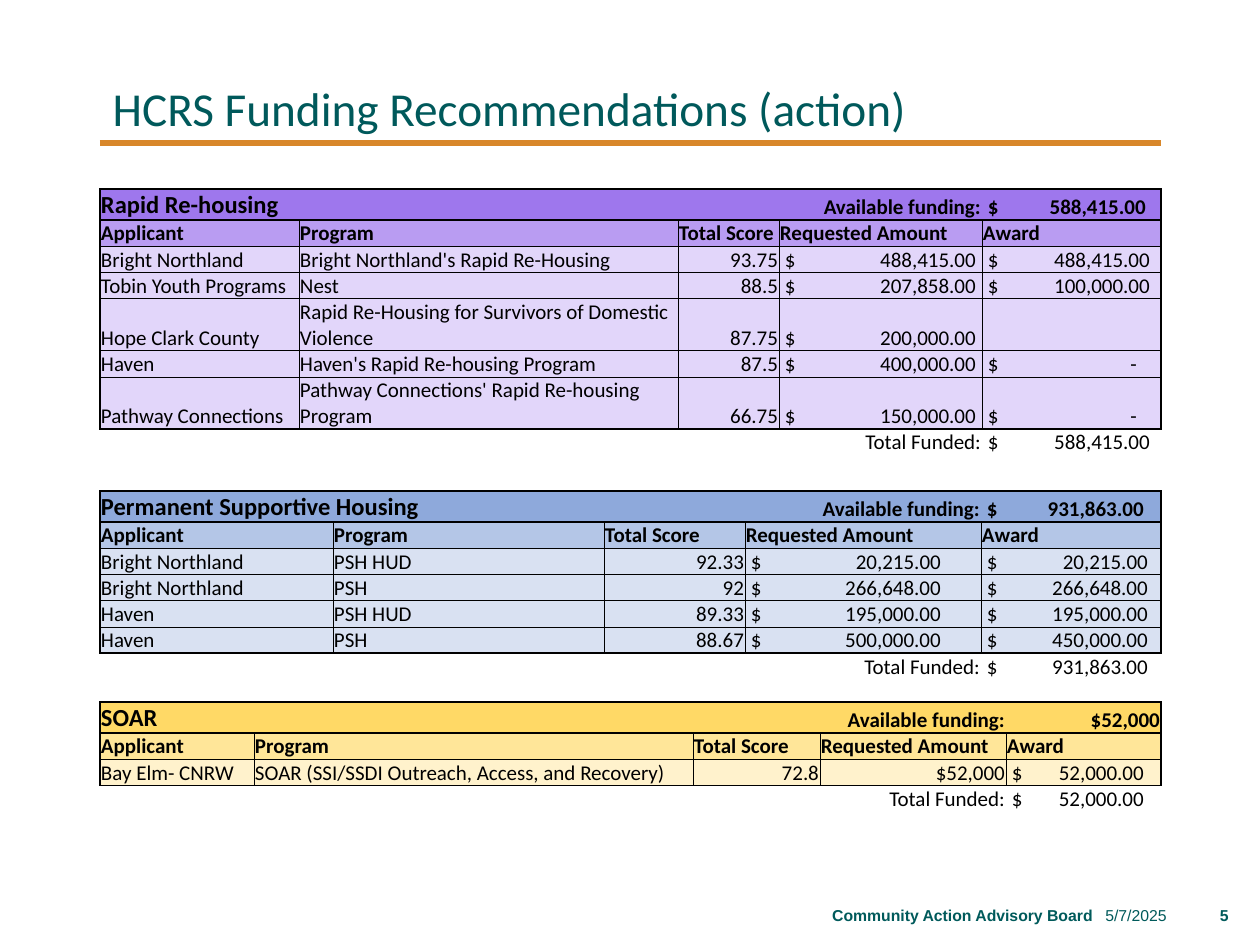
from dataclasses import dataclass
from lxml.etree import SubElement as sub
from pptx import Presentation
from pptx.dml.color import RGBColor as Rgb
from pptx.enum.shapes import MSO_CONNECTOR as Conn
from pptx.enum.text import MSO_ANCHOR as Anchor, MSO_AUTO_SIZE as Fit, PP_ALIGN as Align
from pptx.oxml.ns import qn
from pptx.util import Pt


@dataclass(frozen=True)
class Theme:
    head: str = "00595B"
    foot: str = "005A5B"
    rule: str = "D8872A"
    ink: str = "000000"
    font: str = "Calibri"
    small: str = "Arial"
    title: int = 27
    name: int = 14
    body: int = 12
    note: int = 9
    thin: float = 0.5
    thick: float = 1


@dataclass(frozen=True)
class Fund:
    name: str
    top: int
    cols: tuple
    fills: tuple  # name row, label row, body rows
    stops: dict  # column: right tab for its amounts
    budget: str
    rows: tuple
    total: str
    tall: tuple = ()
    span: int = 1


LEFT, WIDTH = 100, 1061
HIGH, LINE, TWO = 31, 26, 52
PAD = 6
PLAIN = "{2D5ABB26-0587-4C30-8999-92F81FD0307C}"
LABELS = ("Applicant", "Program", "Total Score", "Requested Amount", "Award")


def px(n):
    return round(n * 914400 / 126)


def cash(text):
    return "$\t" + text


class Deck:
    def __init__(self, theme):
        self.theme = theme
        self.prs = Presentation()
        self.prs.slide_width, self.prs.slide_height = px(1260), px(945)
        self.slide = self.prs.slides.add_slide(self.prs.slide_layouts[5])

    def run(self, para, text, size, color, font, bold=False):
        run = para.add_run()
        run.text = text
        style = run.font
        style.size, style.name, style.bold = Pt(size), font, bold
        style.color.rgb = Rgb.from_string(color)

    def title(self, text, x, y, w, h):
        box, t = self.slide.shapes.title, self.theme
        box.left, box.top, box.width, box.height = map(px, (x, y, w, h))
        frame = box.text_frame
        frame.auto_size, frame.vertical_anchor = Fit.NONE, Anchor.BOTTOM
        para = frame.paragraphs[0]
        para.alignment, para.line_spacing = Align.LEFT, 0.9
        self.run(para, text, t.title, t.head, t.font)

    def rule(self, x, y, w):
        line = self.slide.shapes.add_connector(
            Conn.STRAIGHT, px(x), px(y), px(x + w), px(y))
        line.line.color.rgb = Rgb.from_string(self.theme.rule)
        line.line.width = Pt(3)
        sub(line._element.spPr, qn("a:effectLst"))

    def note(self, text, x, w, bold=True):
        t = self.theme
        box = self.slide.shapes.add_textbox(px(x), px(890), px(w), px(50))
        frame = box.text_frame
        frame.word_wrap, frame.vertical_anchor = True, Anchor.MIDDLE
        para = frame.paragraphs[0]
        para.alignment = Align.RIGHT
        self.run(para, text, t.note, t.foot, t.small, bold)

    def edge(self, cell, side, width):
        line = sub(cell._tc.get_or_add_tcPr(), qn("a:ln" + side), w=str(Pt(width)))
        if width:
            fill = sub(line, qn("a:solidFill"))
            sub(fill, qn("a:srgbClr"), val=self.theme.ink)
        else:
            sub(line, qn("a:noFill"))

    def edges(self, cell, r, c, last):
        """Thick round the block and name row, thin inside, none by the total."""
        t = self.theme
        inner = t.thin if 0 < r < last else 0
        outer = t.thick if r < last else 0
        self.edge(cell, "L", inner if c else outer)
        self.edge(cell, "R", inner if c < 4 else outer)
        self.edge(cell, "T", t.thick if r in (0, 1, last) else t.thin)
        self.edge(cell, "B", 0 if r == last else
                  t.thick if r in (0, last - 1) else t.thin)

    def label(self, cell, text, size, bold, right, stop):
        t = self.theme
        amount = "\t" in text
        cell.margin_left = px(PAD if amount else 1)
        cell.margin_right = cell.margin_top = px(1)
        cell.margin_bottom = 0
        cell.vertical_anchor = Anchor.BOTTOM
        para = cell.text_frame.paragraphs[0]
        para.alignment = Align.RIGHT if right and not amount else Align.LEFT
        if amount:
            tabs = sub(para._p.get_or_add_pPr(), qn("a:tabLst"))
            sub(tabs, qn("a:tab"), pos=str(px(stop - PAD)), algn="r")
        if text:
            self.run(para, text, size, t.ink, t.font, bold)
        else:
            sub(para._p, qn("a:endParaRPr"), sz=str(size * 100))

    def table(self, fund):
        t = self.theme
        grid = [(fund.name, "", "", "Available funding:", fund.budget), LABELS,
                *fund.rows, ("", "", "", "Total Funded:", fund.total)]
        last = len(grid) - 1
        highs = [HIGH] + [TWO if r in fund.tall else LINE for r in range(1, last + 1)]
        frame = self.slide.shapes.add_table(
            len(grid), 5, px(LEFT), px(fund.top), px(WIDTH), px(sum(highs)))
        table = frame.table
        table.first_row = table.horz_banding = False
        table._tbl.tblPr.find(qn("a:tableStyleId")).text = PLAIN
        for col, w in zip(table.columns, fund.cols):
            col.width = px(w)
        for row, h in zip(table.rows, highs):
            row.height = px(h)
        for r, texts in enumerate(grid):
            for c, text in enumerate(texts):
                cell = table.cell(r, c)
                size = t.name if (r, c) == (0, 0) else t.body
                stop = fund.stops.get(c, 0) - (4 if r == 0 else 13 if text[-1:] == "-" else 0)
                self.label(cell, text, size, r < 2, r != 1 and c > 1, stop)
                self.edges(cell, r, c, last)
                if r < last:
                    cell.fill.solid()
                    cell.fill.fore_color.rgb = Rgb.from_string(fund.fills[min(r, 2)])
                else:
                    cell.fill.background()
        if fund.span > 1:
            table.cell(0, 0).merge(table.cell(0, fund.span - 1))


FUNDS = (
    Fund("Rapid Re-housing", 189, (199, 379, 101, 203, 179),
         ("9E77ED", "B99CF2", "E2D6FA"), {3: 197, 4: 168}, cash("588,415.00"), (
             ("Bright Northland", "Bright Northland's Rapid Re-Housing", "93.75",
              cash("488,415.00"), cash("488,415.00")),
             ("Tobin Youth Programs", "Nest", "88.5", cash("207,858.00"), cash("100,000.00")),
             ("Hope Clark County", "Rapid Re-Housing for Survivors of Domestic Violence",
              "87.75", cash("200,000.00"), ""),
             ("Haven", "Haven's Rapid Re-housing Program", "87.5",
              cash("400,000.00"), cash("-")),
             ("Pathway Connections", "Pathway Connections' Rapid Re-housing Program",
              "66.75", cash("150,000.00"), cash("-"))),
         cash("588,415.00"), tall=(4, 6)),
    Fund("Permanent Supportive Housing", 491, (233, 271, 141, 236, 180),
         ("8EA9DB", "B4C6E7", "D9E1F2"), {3: 196, 4: 167}, cash("931,863.00"), (
             ("Bright Northland", "PSH HUD", "92.33", cash("20,215.00"), cash("20,215.00")),
             ("Bright Northland", "PSH", "92", cash("266,648.00"), cash("266,648.00")),
             ("Haven", "PSH HUD", "89.33", cash("195,000.00"), cash("195,000.00")),
             ("Haven", "PSH", "88.67", cash("500,000.00"), cash("450,000.00"))),
         cash("931,863.00"), span=2),
    Fund("SOAR", 702, (154, 439, 127, 186, 155),
         ("FFD966", "FFE699", "FFF2CC"), {4: 138}, "$52,000", (
             ("Bay Elm- CNRW", "SOAR (SSI/SSDI Outreach, Access, and Recovery)", "72.8",
              "$52,000", cash("52,000.00")),),
         cash("52,000.00")),
)


def main():
    deck = Deck(Theme())
    deck.rule(LEFT, 143, WIDTH)
    deck.title("HCRS Funding Recommendations (action)", LEFT, 50, WIDTH, 93)
    deck.note("5/7/2025", 1079, 100, bold=False)
    deck.note("Community Action Advisory Board", 315, 790)
    deck.note("5", 1182, 59)
    for fund in FUNDS:
        deck.table(fund)
    deck.prs.save("out.pptx")


if __name__ == "__main__":
    main()
